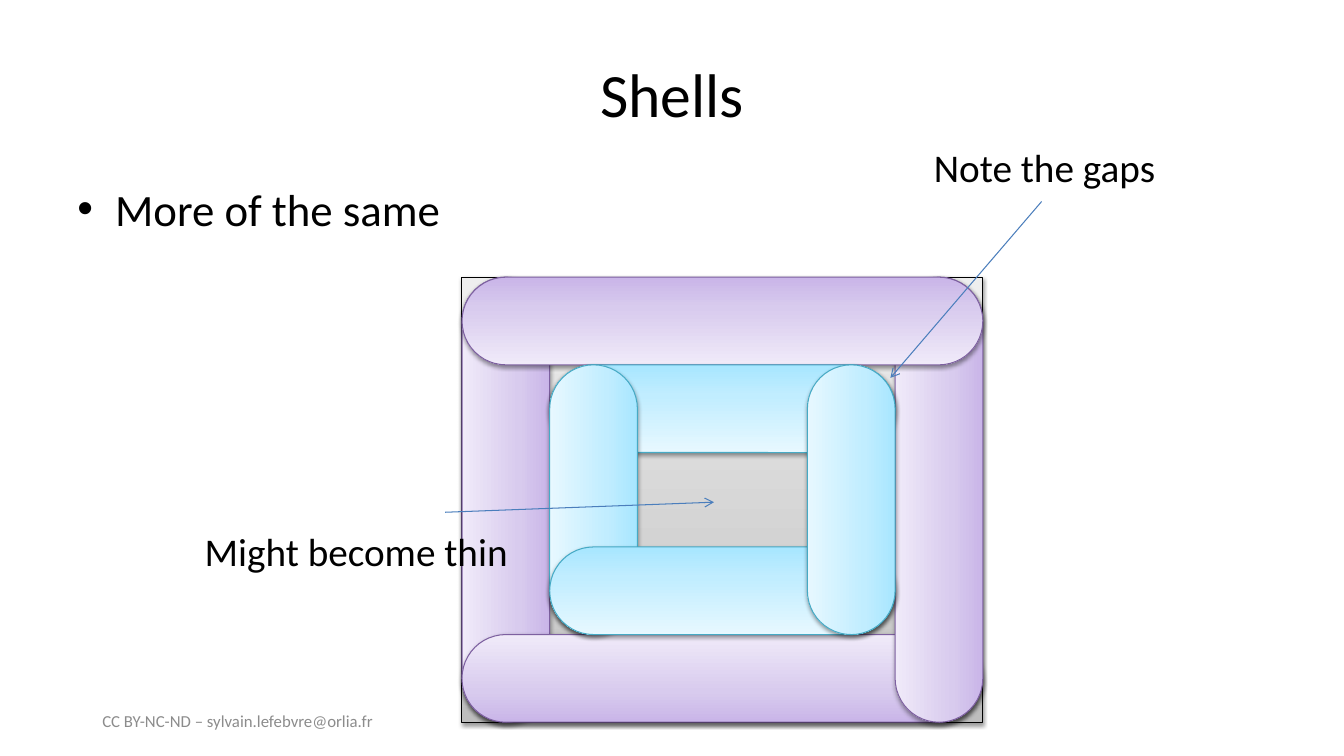
import lxml.etree
import pptx
import pptx.dml.color
import pptx.enum.shapes
import pptx.enum.text
import pptx.oxml
import pptx.oxml.ns
import pptx.util

RGB = pptx.dml.color.RGBColor
BLACK = RGB(0x00, 0x00, 0x00)
GREY = RGB(0x8C, 0x8C, 0x8C)
BLUE = RGB(0x4B, 0x7E, 0xBC)
PLUM = RGB(0x7D, 0x60, 0xA0)
TEAL = RGB(0x46, 0xAA, 0xC5)
STONE = (RGB(0xBD, 0xBD, 0xBD), RGB(0xD1, 0xD1, 0xD1), RGB(0xEE, 0xEE, 0xEE))
LILAC = (RGB(0xC9, 0xB5, 0xE8), RGB(0xD8, 0xCB, 0xEE), RGB(0xF0, 0xEA, 0xF9))
AQUA = (RGB(0xA7, 0xE6, 0xFF), RGB(0xC1, 0xED, 0xFF), RGB(0xE7, 0xF8, 0xFF))

SHAPE = pptx.enum.shapes.MSO_SHAPE
ANCHOR = pptx.enum.text.MSO_ANCHOR
ALIGN = pptx.enum.text.PP_ALIGN
COLS = 160
THICK = 10.44
NS = pptx.oxml.ns.nsdecls("a")
SHADOW = (
    f'<a:effectLst {NS}><a:outerShdw blurRad="40000" dist="20000" dir="5400000" '
    'rotWithShape="0"><a:srgbClr val="000000"><a:alpha val="38000"/></a:srgbClr>'
    '</a:outerShdw></a:effectLst>'
)


class Sketch:
    """Draws styled elements on one slide, measured in grid columns and rows."""

    def __init__(self, deck):
        self.cell = deck.slide_width / COLS
        self.font = {"name": "Calibri"}
        self.line = {"width": pptx.util.Pt(0.75)}
        self.slide = deck.slides.add_slide(deck.slide_layouts[1])

    def span(self, *cells):
        return [round(n * self.cell) for n in cells]

    def dress(self, item, looks):
        for name, value in looks.items():
            setattr(item, name, value)

    def letter(self, shape, text, size, color=BLACK, para=None, **frame):
        self.dress(shape.text_frame, frame)
        first = shape.text_frame.paragraphs[0]
        self.dress(first, para or {})
        run = first.add_run()
        run.text = text
        self.dress(run.font, {**self.font, "size": pptx.util.Pt(size)})
        run.font.color.rgb = color

    def holder(self, index, box, text, size, **looks):
        shape = self.slide.placeholders[index]
        sides = ("left", "top", "width", "height")
        self.dress(shape, dict(zip(sides, self.span(*box))))
        self.letter(shape, text, size, **looks)

    def label(self, box, text, size, color=BLACK, **frame):
        shape = self.slide.shapes.add_textbox(*self.span(*box))
        self.letter(shape, text, size, color, **frame)

    def block(self, kind, box, fill, edge, turn=0):
        col, row, wide, high = box
        if turn % 180:
            shift = (wide - high) / 2
            box = col + shift, row - shift, high, wide
        shape = self.slide.shapes.add_shape(kind, *self.span(*box))
        shape.rotation = turn
        if kind == SHAPE.ROUNDED_RECTANGLE:
            shape.adjustments[0] = 0.5
        stops = "".join(
            f'<a:gs pos="{pos}"><a:srgbClr val="{tone}"/></a:gs>'
            for pos, tone in zip((0, 35000, 100000), fill))
        props = shape._element.spPr
        props.append(pptx.oxml.parse_xml(
            f'<a:gradFill {NS} rotWithShape="1"><a:gsLst>{stops}</a:gsLst>'
            '<a:lin ang="16200000" scaled="0"/></a:gradFill>'))
        self.dress(shape.line, self.line)
        shape.line.color.rgb = edge
        props.append(pptx.oxml.parse_xml(SHADOW))

    def ring(self, box, fill, edge, turns):
        col, row, wide, high = box
        bars = {
            "left": (col, row, THICK, high),
            "right": (col + wide - THICK, row, THICK, high),
            "top": (col, row, wide, THICK),
            "bottom": (col, row + high - THICK, wide, THICK),
        }
        for side, turn in turns.items():
            self.block(SHAPE.ROUNDED_RECTANGLE, bars[side], fill, edge, turn)

    def arrow(self, start, end):
        kind = pptx.enum.shapes.MSO_CONNECTOR.STRAIGHT
        link = self.slide.shapes.add_connector(kind, *self.span(*start, *end))
        self.dress(link.line, self.line)
        link.line.color.rgb = BLUE
        props = link._element.spPr
        qn = pptx.oxml.ns.qn
        lxml.etree.SubElement(props.find(qn("a:ln")), qn("a:tailEnd"), type="arrow")
        lxml.etree.SubElement(props, qn("a:effectLst"))


def main():
    deck = pptx.Presentation()
    deck.slide_width = pptx.util.Inches(13.33)
    deck.slide_height = pptx.util.Inches(7.5)
    art = Sketch(deck)
    art.holder(0, (8, 3.6, 144, 15), "Shells", 44,
               para={"alignment": ALIGN.CENTER}, vertical_anchor=ANCHOR.MIDDLE)
    art.holder(1, (8, 21, 144, 59.4), "More of the same", 32)

    outer = (55, 33, 62, 53)
    inner = (outer[0] + THICK, outer[1] + THICK,
             outer[2] - 2 * THICK, outer[3] - 2 * THICK)
    art.block(SHAPE.RECTANGLE, outer, STONE, BLACK)
    art.ring(outer, LILAC, PLUM, {"left": 270, "bottom": 0, "right": 270, "top": 180})
    art.ring(inner, AQUA, TEAL, {"top": 180, "left": 270, "bottom": 180, "right": 270})

    art.arrow((124, 24), (106, 45))
    art.label((110, 16.5, 29, 6.9), "Note the gaps", 28, word_wrap=False)
    art.label((23.2, 62.2, 38.9, 6.9), "Might become thin", 28, word_wrap=False)
    art.arrow((53, 61), (85, 59.8))
    art.label((11, 83.4, 36, 4.8), "CC BY-NC-ND – sylvain.lefebvre@orlia.fr", 12, GREY,
              word_wrap=True, vertical_anchor=ANCHOR.MIDDLE)
    deck.save("out.pptx")


if __name__ == "__main__":
    main()
